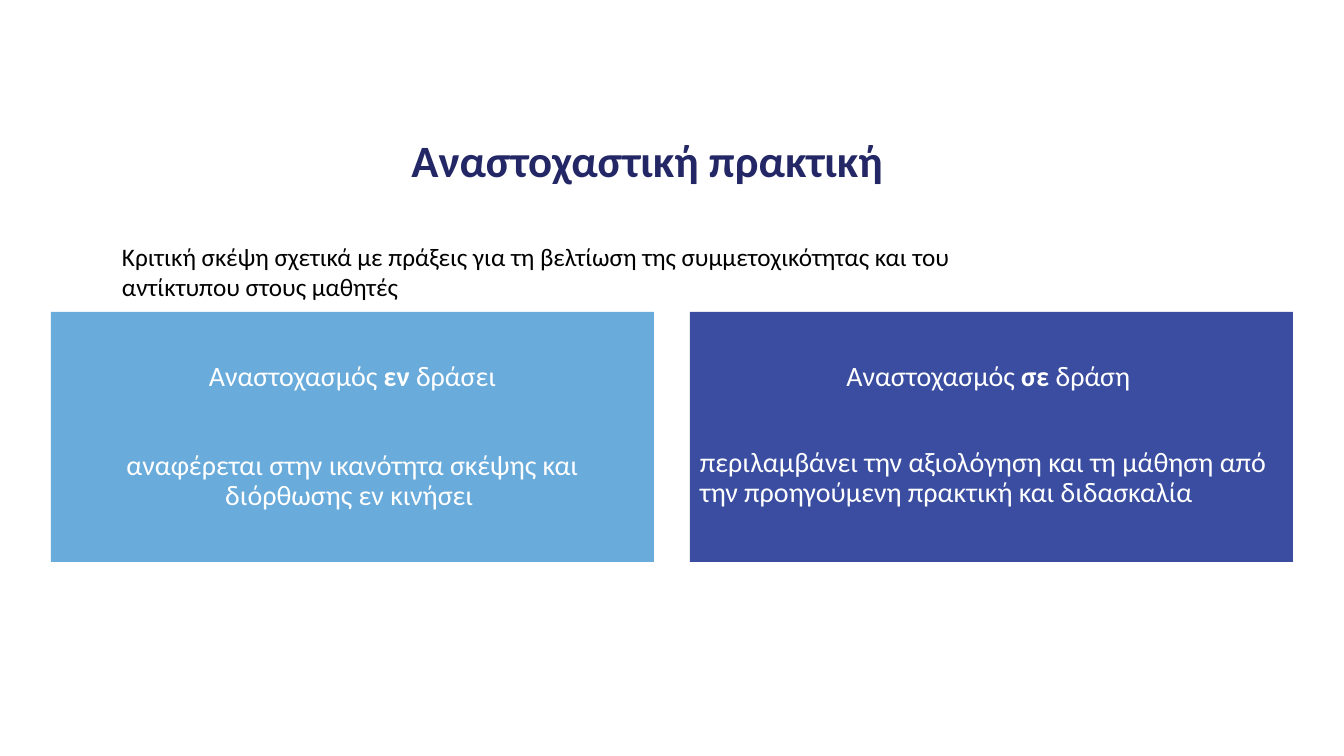
from dataclasses import dataclass

from pptx import Presentation
from pptx.dml.color import RGBColor
from pptx.enum.shapes import MSO_SHAPE as Shape
from pptx.enum.text import MSO_ANCHOR as Anchor, PP_ALIGN as Align
from pptx.util import Pt

EMU_PER_PX = 914400 / 100.8


@dataclass(frozen=True)
class Theme:
    font: str = "Calibri"
    navy: str = "232765"
    sky: str = "69ABDB"
    indigo: str = "3A4DA0"
    white: str = "FFFFFF"
    black: str = "000000"
    title_size: int = 32
    panel_size: int = 20
    caption_size: int = 18


THEME = Theme()


def px(length):
    return round(length * EMU_PER_PX)


def set_frame(shape, anchor=Anchor.TOP, top=5):
    frame = shape.text_frame
    frame.word_wrap = True
    frame.vertical_anchor = anchor
    frame.margin_left = frame.margin_right = px(10)
    frame.margin_top, frame.margin_bottom = px(top), px(5)
    return frame


def write(para, *spans, size, color, bold=(), align=Align.LEFT, line=0.9, before=0):
    """Write spans into a paragraph; bold holds the indexes of the bold ones."""
    para.alignment = align
    para.line_spacing = line
    para.space_before = Pt(before)
    for index, text in enumerate(spans):
        span = para.add_run()
        span.text = text
        span.font.name = THEME.font
        span.font.size = Pt(size)
        span.font.bold = index in bold
        span.font.color.rgb = RGBColor.from_string(color)


def add_title(page, box, text):
    shape = page.shapes.add_textbox(*map(px, box))
    frame = set_frame(shape, Anchor.MIDDLE)
    write(frame.paragraphs[0], text, size=THEME.title_size, color=THEME.navy,
          bold=(0,), align=Align.CENTER)


def add_caption(page, box, text):
    frame = set_frame(page.shapes.add_textbox(*map(px, box)))
    write(frame.paragraphs[0], text, size=THEME.caption_size, color=THEME.black, line=1)


def add_panel(page, box, fill, heading, body, body_align, body_gap):
    panel = page.shapes.add_shape(Shape.RECTANGLE, *map(px, box))
    panel.shadow.inherit = False
    panel.fill.solid()
    panel.fill.fore_color.rgb = RGBColor.from_string(fill)
    panel.line.fill.background()
    frame = set_frame(panel, top=50)
    style = dict(size=THEME.panel_size, color=THEME.white)
    write(frame.paragraphs[0], *heading, bold=(1,), align=Align.CENTER, **style)
    write(frame.add_paragraph(), body, align=body_align, before=body_gap, **style)


def add_panels(page, box, gap, panels):
    left, top, width, height = box
    panel_width = (width - gap * (len(panels) - 1)) // len(panels)
    for index, panel in enumerate(panels):
        panel_left = left + index * (panel_width + gap)
        add_panel(page, (panel_left, top, panel_width, height), *panel)


def main():
    deck = Presentation()
    deck.slide_width, deck.slide_height = px(1344), px(756)
    page = deck.slides.add_slide(deck.slide_layouts[6])

    # Title
    add_title(page, (53, 126, 1199, 75), "Αναστοχαστική πρακτική ")

    # Two kinds of reflection
    add_panels(page, (51, 312, 1242, 250), 36, [
        (THEME.sky, ("Αναστοχασμός ", "εν ", "δράσει"),
         "αναφέρεται στην ικανότητα σκέψης και διόρθωσης εν κινήσει ",
         Align.CENTER, 42),
        (THEME.indigo, ("Αναστοχασμός ", "σε ", "δράση "),
         "περιλαμβάνει την αξιολόγηση και τη μάθηση από την προηγούμενη "
         "πρακτική και διδασκαλία",
         Align.LEFT, 40),
    ])

    # Definition above the panels
    add_caption(page, (112, 236, 850, 72),
                "Κριτική σκέψη σχετικά με πράξεις για τη βελτίωση της "
                "συμμετοχικότητας και του αντίκτυπου στους μαθητές")

    deck.save("out.pptx")


if __name__ == "__main__":
    main()
